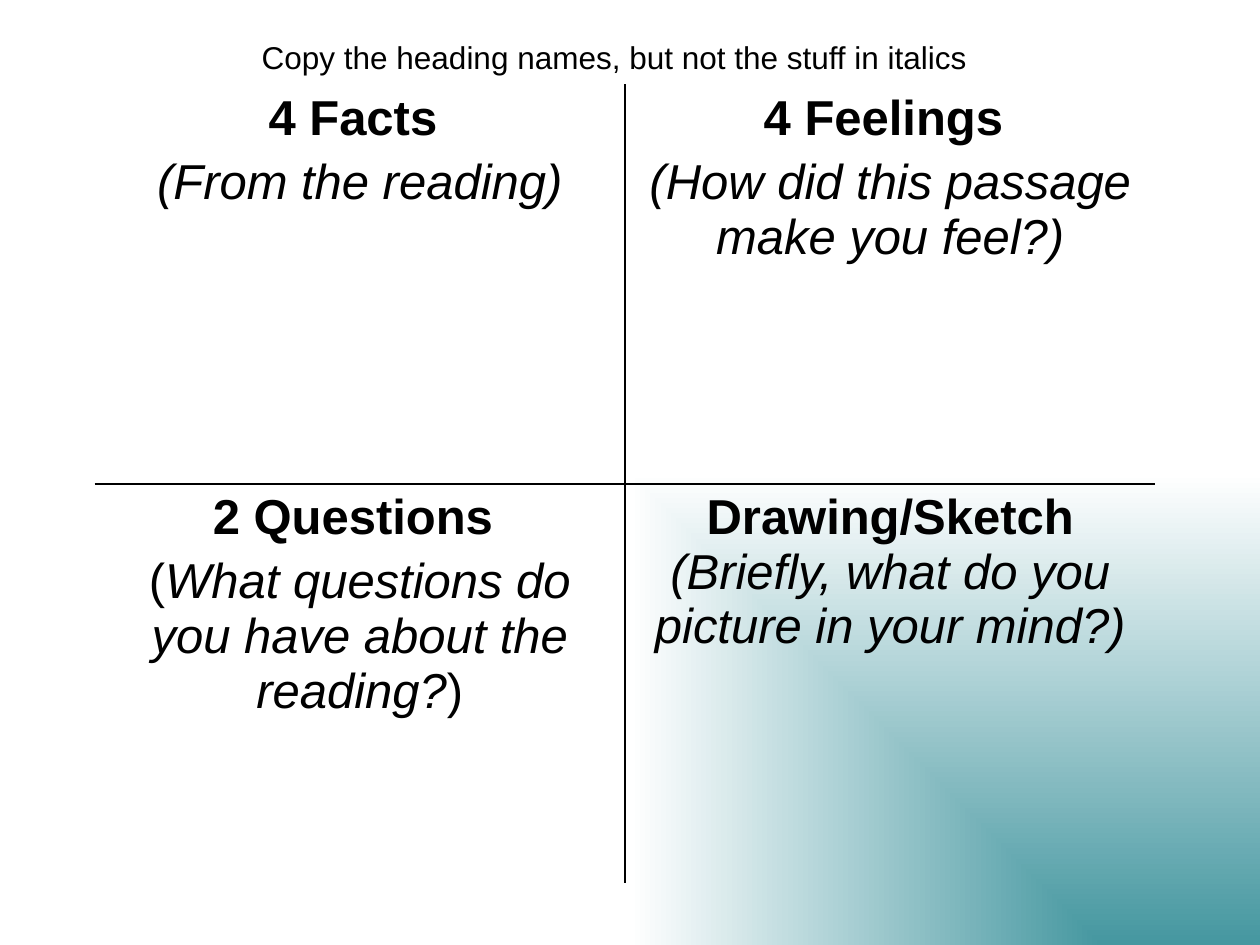
import pptx
import pptx.dml.color
import pptx.enum.text
import pptx.oxml
import pptx.oxml.ns
import pptx.util
from lxml import etree

COLORS = {"ink": "000000", "teal": "4597A0", "paper": "FFFFFF"}
FONT = "Arial"
HINT = "Copy the heading names, but not the stuff in italics"

# Each quadrant is a list of paragraphs, each paragraph a list of (text, style).
QUADRANTS = [
    [
        [[("4 Facts ", "bold")], [("(From the reading)", "italic")]],
        [[("4 Feelings ", "bold")],
         [("(How did this passage make you feel?)", "italic")]],
    ],
    [
        [[("2 Questions ", "bold")],
         [("(", "plain"),
          ("What questions do you have about the reading?", "italic"),
          (")", "plain")]],
        [[("Drawing/Sketch ", "bold"),
          ("(Briefly, what do you picture in your mind?)", "italic")]],
    ],
]

SLIDE_W, SLIDE_H = pptx.util.Inches(10), pptx.util.Inches(7.5)
GRID_LEFT, GRID_TOP = pptx.util.Inches(0.75), pptx.util.Inches(0.67)
COLUMN_W, ROW_H = pptx.util.Inches(4.21), pptx.util.Inches(3.17)
NS = 'xmlns:a="http://schemas.openxmlformats.org/drawingml/2006/main"'


def format_paragraph(paragraph, size, space_share):
    paragraph.alignment = pptx.enum.text.PP_ALIGN.CENTER
    paragraph.space_before = pptx.util.Pt(size * space_share)
    paragraph.font.size = pptx.util.Pt(size)
    paragraph.font.name = FONT
    paragraph.font.color.rgb = pptx.dml.color.RGBColor.from_string(COLORS["ink"])


def paint_background(slide):
    """Fade from teal in the lower right corner to white."""
    fill = slide.background.fill
    fill.gradient()
    gradient = slide.element.find(".//" + pptx.oxml.ns.qn("a:gradFill"))
    corner = pptx.oxml.parse_xml(
        f'<a:gradFill {NS} rotWithShape="0"><a:gsLst>'
        f'<a:gs pos="0"><a:srgbClr val="{COLORS["teal"]}"/></a:gs>'
        f'<a:gs pos="100000"><a:srgbClr val="{COLORS["paper"]}"/></a:gs>'
        '</a:gsLst><a:path path="rect">'
        '<a:fillToRect l="100000" t="100000"/></a:path></a:gradFill>')
    gradient.getparent().replace(gradient, corner)


def draw_borders(cell, inner_sides):
    """Rule the inner sides of a cell and clear the outer ones."""
    properties = cell._tc.get_or_add_tcPr()
    for position, side in enumerate("LRTB"):
        ink = (f'<a:solidFill><a:srgbClr val="{COLORS["ink"]}"/></a:solidFill>'
               if side in inner_sides else "<a:noFill/>")
        properties.insert(position, etree.fromstring(
            f'<a:ln{side} {NS} w="{pptx.util.Pt(1)}">{ink}</a:ln{side}>'))


def fill_cell(cell, paragraphs):
    cell.fill.background()
    frame = cell.text_frame
    for index, runs in enumerate(paragraphs):
        paragraph = frame.add_paragraph() if index else frame.paragraphs[0]
        format_paragraph(paragraph, 28, 0.2)
        for text, style in runs:
            run = paragraph.add_run()
            run.text = text
            run.font.bold = style == "bold"
            run.font.italic = style == "italic"


def add_quadrants(slide):
    rows, columns = len(QUADRANTS), len(QUADRANTS[0])
    grid = slide.shapes.add_table(rows, columns, GRID_LEFT, GRID_TOP,
                                  COLUMN_W * columns, ROW_H * rows).table
    grid.first_row = grid.horz_banding = False
    for r, row in enumerate(QUADRANTS):
        for c, paragraphs in enumerate(row):
            cell = grid.cell(r, c)
            fill_cell(cell, paragraphs)
            draw_borders(cell, ("L" if c else "R") + ("T" if r else "B"))


def add_hint(slide):
    hint = slide.shapes.add_textbox(SLIDE_W * 0.125, pptx.util.Inches(0.25),
                                    SLIDE_W * 0.725, pptx.util.Inches(0.4))
    frame = hint.text_frame
    frame.word_wrap = True
    frame.auto_size = pptx.enum.text.MSO_AUTO_SIZE.SHAPE_TO_FIT_TEXT
    frame.text = HINT
    format_paragraph(frame.paragraphs[0], 18, 0.5)


def main():
    deck = pptx.Presentation()
    deck.slide_width, deck.slide_height = SLIDE_W, SLIDE_H
    slide = deck.slides.add_slide(deck.slide_layouts.get_by_name("Blank"))
    paint_background(slide)
    add_quadrants(slide)
    add_hint(slide)
    deck.save("out.pptx")


if __name__ == "__main__":
    main()
